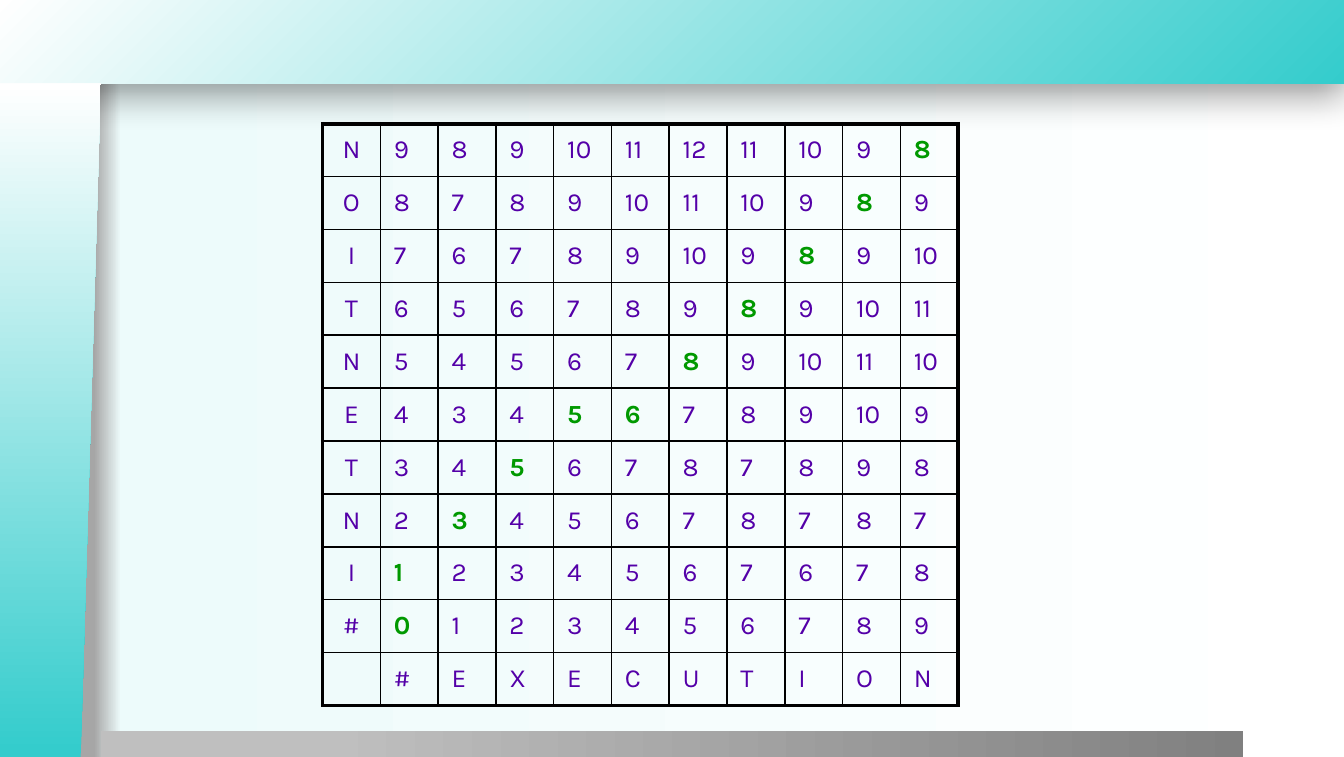
from lxml import etree
from pptx import Presentation
from pptx.dml.color import RGBColor
from pptx.enum.shapes import MSO_SHAPE
from pptx.enum.text import MSO_ANCHOR, PP_ALIGN
from pptx.oxml.ns import qn
from pptx.util import Inches, Pt

RECTANGLE = MSO_SHAPE.RECTANGLE
MANUAL_INPUT = MSO_SHAPE.FLOWCHART_MANUAL_INPUT
MIDDLE = MSO_ANCHOR.MIDDLE
CENTER = PP_ALIGN.CENTER
LEFT = PP_ALIGN.LEFT

COLORS = {
    "teal": "34CCCC",
    "mist": "EDFBFB",
    "white": "FFFFFF",
    "edge": "A6A6A6",
    "silver": "BFBFBF",
    "gray": "808080",
    "black": "000000",
    "purple": "5400A8",
    "green": "009900",
}
FONT = "Karla"

# Edit distances, one row per letter of the source word
DISTANCES = [
    "N 9 8 9 10 11 12 11 10 9 8",
    "O 8 7 8 9 10 11 10 9 8 9",
    "I 7 6 7 8 9 10 9 8 9 10",
    "T 6 5 6 7 8 9 8 9 10 11",
    "N 5 4 5 6 7 8 9 10 11 10",
    "E 4 3 4 5 6 7 8 9 10 9",
    "T 3 4 5 6 7 8 7 8 9 8",
    "N 2 3 4 5 6 7 8 7 8 7",
    "I 1 2 3 4 5 6 7 6 7 8",
    "# 0 1 2 3 4 5 6 7 8 9",
]
# The target word runs along the bottom row
rows = [line.split() for line in DISTANCES] + [["", "#", *"EXECUTION"]]
last = len(rows) - 1
# Green column of each row, from the top down; one row has a second one
ALIGNMENT = set(enumerate([10, 9, 8, 7, 6, 5, 3, 2, 1, 1])) | {(5, 4)}


def add_color(parent, name):
    return etree.SubElement(parent, qn("a:srgbClr"), val=COLORS[name])


def paint_gradient(fill, owner, stops, radial=False):
    """Fill with (percent, colour) stops, left to right or around the lower right corner."""
    fill.gradient()
    gradient = owner.xpath(".//a:gradFill")[0]
    for child in list(gradient):
        gradient.remove(child)
    stop_list = etree.SubElement(gradient, qn("a:gsLst"))
    for percent, name in stops:
        add_color(etree.SubElement(stop_list, qn("a:gs"), pos=str(percent * 1000)), name)
    if radial:
        center = etree.SubElement(gradient, qn("a:path"), path="circle")
        etree.SubElement(center, qn("a:fillToRect"), l="100000", t="100000")
    else:
        etree.SubElement(gradient, qn("a:lin"), ang="0", scaled="0")


deck = Presentation()
deck.slide_width = Inches(10)
deck.slide_height = Inches(5.63)
page = deck.slides.add_slide(deck.slide_layouts[6])
paint_gradient(page.background.fill, page._element,
               [(7, "edge"), (9, "mist"), (100, "white")])

# Frame: top banner, bottom bar and slanted side panel
frame = {}
for part, kind, place, stops in [
    ("banner", RECTANGLE, (0, 0, 10, 0.62), [(0, "teal"), (100, "white")]),
    ("bar", RECTANGLE, (0.75, 5.44, 8.5, 0.19), [(20, "silver"), (100, "gray")]),
    ("panel", MANUAL_INPUT, (-2.13, 2.75, 5.01, 0.75), [(1, "teal"), (100, "white")]),
]:
    shape = page.shapes.add_shape(kind, *map(Inches, place))
    shape.shadow.inherit = False
    shape.line.fill.background()
    paint_gradient(shape.fill, shape._element, stops, radial=part == "banner")
    frame[part] = shape

frame["panel"].rotation = 270
frame["panel"]._element.spPr.find(qn("a:xfrm")).set("flipV", "1")

effects = frame["banner"]._element.spPr.find(qn("a:effectLst"))
shadow = etree.SubElement(effects, qn("a:outerShdw"), blurRad=str(Pt(20)),
                          dist=str(Pt(6)), dir="5400000", algn="t", rotWithShape="0")
etree.SubElement(add_color(shadow, "black"), qn("a:alpha"), val="40000")

# Distance table
table = page.shapes.add_table(len(rows), len(rows[0]), Inches(2.4), Inches(0.92),
                              Inches(4.73), Inches(4.33)).table
table.first_row = False
table.horz_banding = False
for row, values in enumerate(rows):
    for column, value in enumerate(values):
        cell = table.cell(row, column)
        cell.vertical_anchor = MIDDLE
        cell.text = value
        highlighted = (row, column) in ALIGNMENT
        para = cell.text_frame.paragraphs[0]
        para.alignment = CENTER if column == 0 else LEFT
        para.font.name = FONT
        para.font.size = Pt(14)
        para.font.bold = highlighted
        para.font.color.rgb = RGBColor.from_string(
            COLORS["green" if highlighted else "purple"])
        for side, outer in [("L", column == 0), ("R", column == last),
                            ("T", row == 0), ("B", row == last)]:
            border = etree.SubElement(cell._tc.get_or_add_tcPr(), qn(f"a:ln{side}"),
                                      w=str(Pt(2.25 if outer else 1)))
            add_color(etree.SubElement(border, qn("a:solidFill")), "black")
        cell.fill.background()

deck.save("out.pptx")
